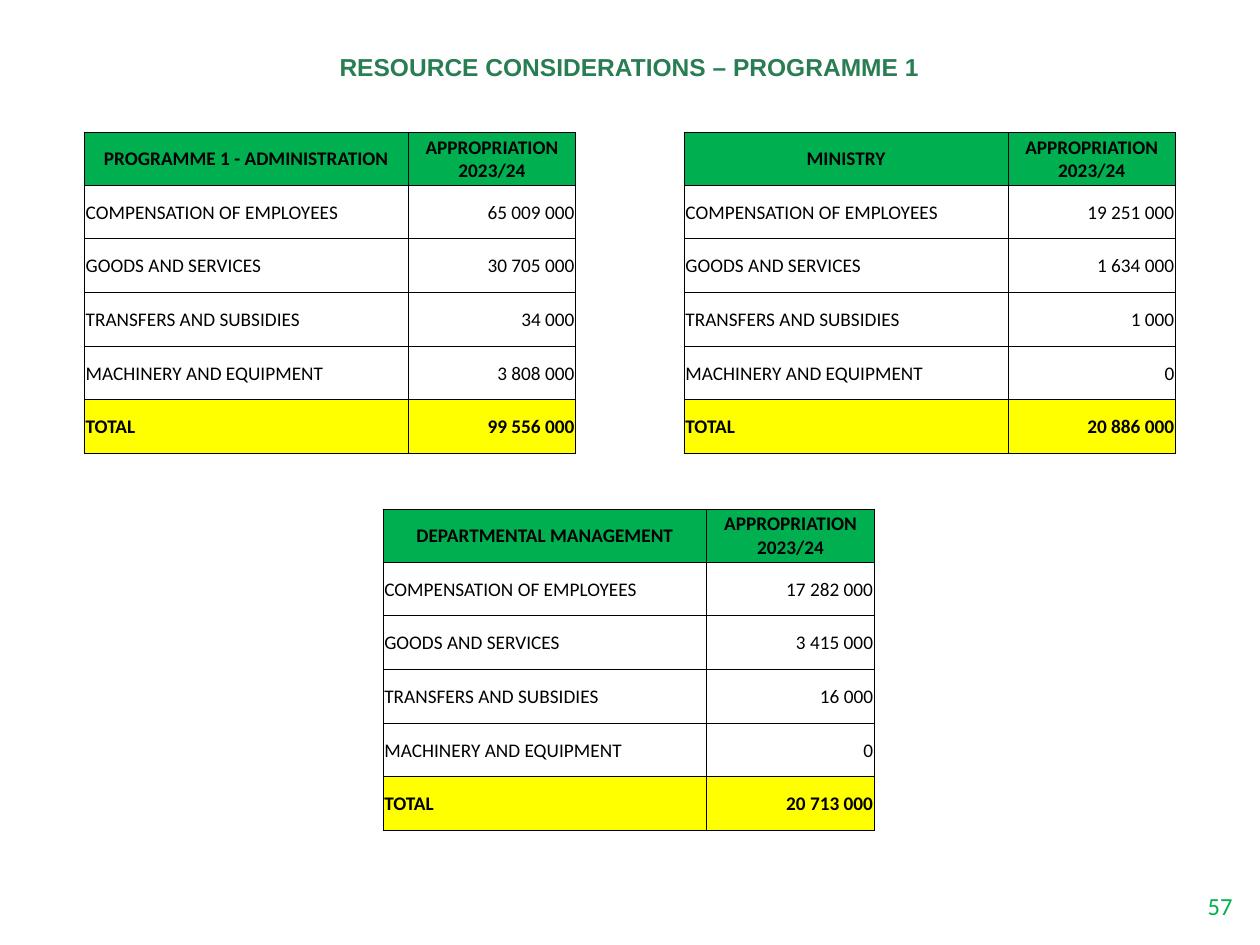
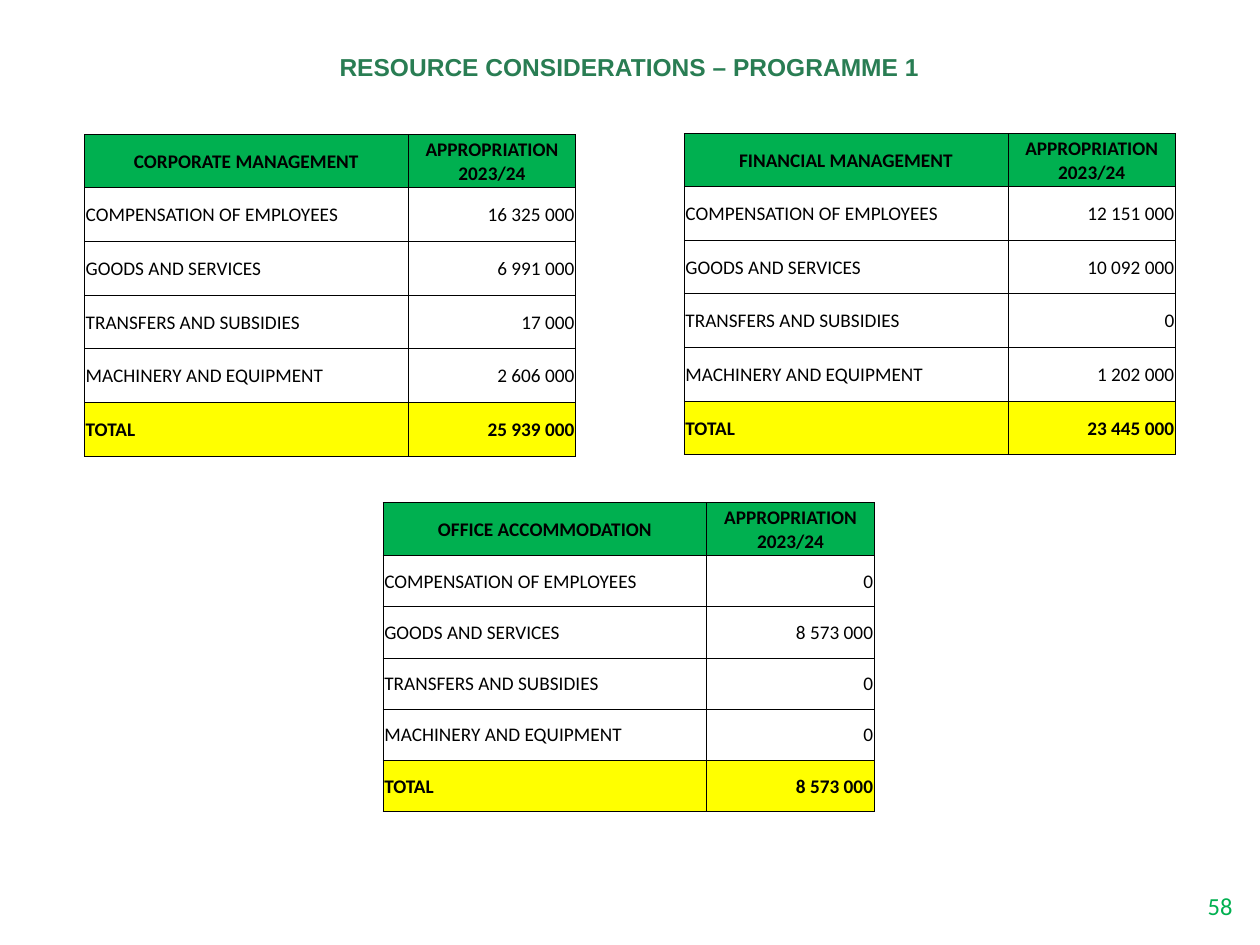
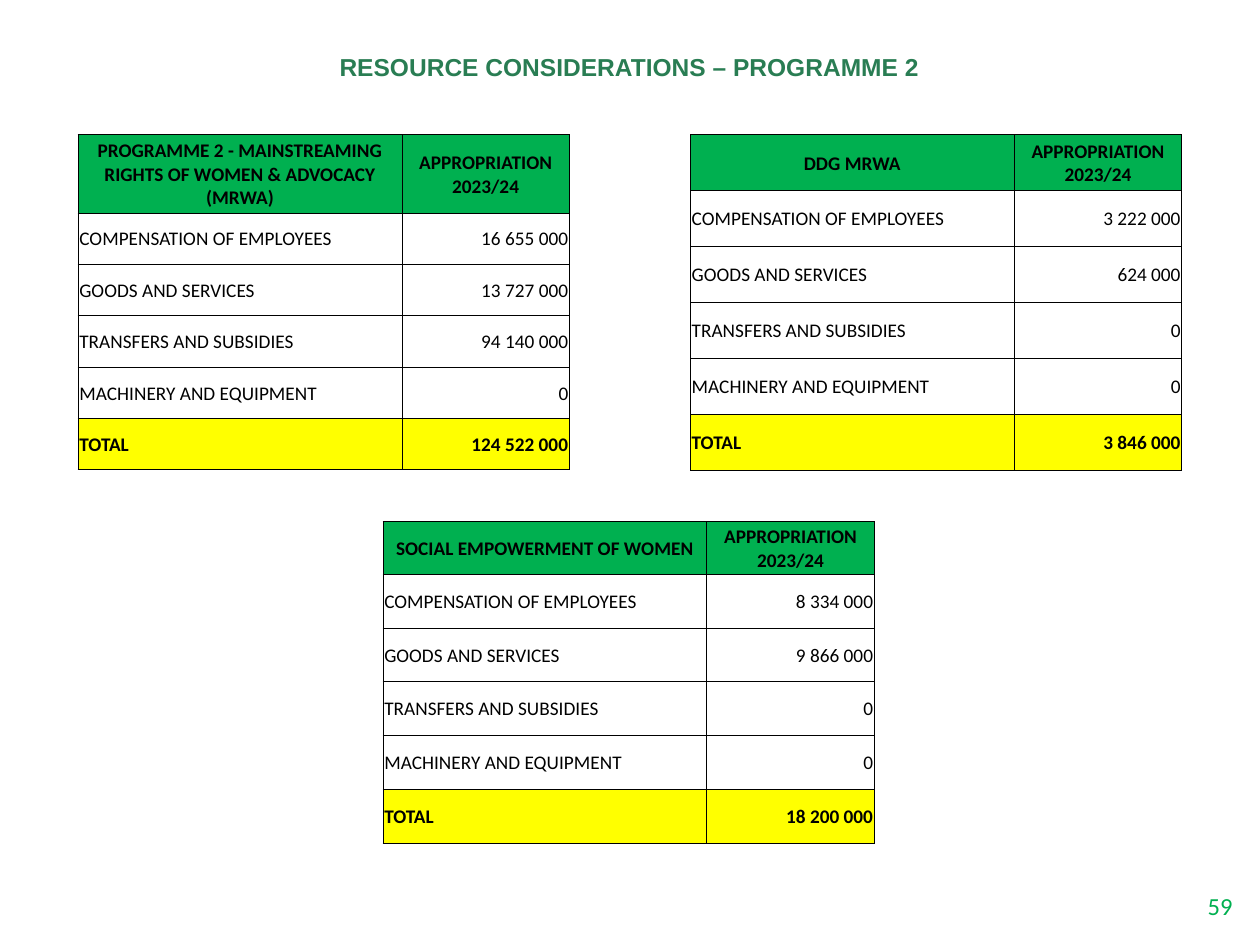
from dataclasses import dataclass

from lxml.etree import SubElement
from pptx import Presentation
from pptx.dml.color import RGBColor
from pptx.enum.text import MSO_ANCHOR as Anchor, PP_ALIGN as Align
from pptx.oxml.ns import qn
from pptx.util import Emu, Inches, Pt

# Slide grid: square units, 100 columns by 75 rows
COLUMNS, ROWS = 100, 75
UNIT = Inches(0.1)

# Shared style
TITLE_FONT, BODY_FONT = "Arial", "Calibri"
TITLE_GREEN, BRAND_GREEN = "297D53", "00B050"
YELLOW, BLACK = "FFFF00", "000000"
TITLE_LAYOUT = 5
FIRST_PAGE = 57

# Table geometry, in grid units
LABEL_WIDTH, AMOUNT_WIDTH = 25.7, 13.3
TABLE_WIDTH = LABEL_WIDTH + AMOUNT_WIDTH
CENTRE_LEFT = 30.4
HEADER_HEIGHT = 4.2
AMOUNT_HEADING = "APPROPRIATION 2023/24"
EXPENSES = [
    "COMPENSATION OF EMPLOYEES",
    "GOODS AND SERVICES",
    "TRANSFERS AND SUBSIDIES",
    "MACHINERY AND EQUIPMENT",
]


@dataclass
class Budget:
    heading: str
    top: float
    thousands: tuple[int, ...]
    height: float = 25.5
    header_height: float = HEADER_HEIGHT


@dataclass
class BudgetSlide:
    programme: int
    margin: float
    left: Budget
    right: Budget
    centre: Budget


SLIDES = [
    BudgetSlide(
        1, 6.7,
        Budget("PROGRAMME 1 - ADMINISTRATION", 10.5, (65009, 30705, 34, 3808)),
        Budget("MINISTRY", 10.5, (19251, 1634, 1, 0)),
        Budget("DEPARTMENTAL MANAGEMENT", 40.4, (17282, 3415, 16, 0)),
    ),
    BudgetSlide(
        1, 6.7,
        Budget("CORPORATE MANAGEMENT", 10.7, (16325, 6991, 17, 2606)),
        Budget("FINANCIAL MANAGEMENT", 10.6, (12151, 10092, 0, 1202)),
        Budget("OFFICE ACCOMMODATION", 39.9, (0, 8573, 0, 0), height=24.5),
    ),
    BudgetSlide(
        2, 6.2,
        Budget("PROGRAMME 2 - MAINSTREAMING RIGHTS OF WOMEN & ADVOCACY (MRWA)",
               10.7, (16655, 13727, 94140, 0), height=26.6, header_height=6.2),
        Budget("DDG MRWA", 10.7, (3222, 624, 0, 0), height=26.6, header_height=4.43),
        Budget("SOCIAL EMPOWERMENT OF WOMEN", 41.4, (8334, 9866, 0, 0)),
    ),
]


def grid(units: float) -> Emu:
    return Emu(round(units * UNIT))


def rgb(value: str) -> RGBColor:
    return RGBColor.from_string(value)


def rand(thousands: int) -> str:
    return f"{thousands * 1000:,}".replace(",", " ")


def write(text_frame, text: str, font_name: str, size: float, color: str,
          align: Align, bold: bool = False) -> None:
    text_frame.text = text
    paragraph = text_frame.paragraphs[0]
    paragraph.alignment = align
    font = paragraph.runs[0].font
    font.name, font.size, font.bold = font_name, Pt(size), bold
    font.color.rgb = rgb(color)


def add_borders(cell) -> None:
    properties = cell._tc.get_or_add_tcPr()
    for side in ("lnL", "lnR", "lnT", "lnB"):
        line = SubElement(properties, qn(f"a:{side}"), w=str(Pt(0.5)))
        fill = SubElement(line, qn("a:solidFill"))
        SubElement(fill, qn("a:srgbClr"), val=BLACK)


def format_cell(cell, text: str, align: Align, fill: str | None) -> None:
    cell.margin_left = cell.margin_top = cell.margin_right = Inches(0.01)
    cell.margin_bottom = 0
    cell.vertical_anchor = Anchor.MIDDLE
    write(cell.text_frame, text, BODY_FONT, 11, BLACK, align, bold=fill is not None)
    add_borders(cell)
    if fill:
        cell.fill.solid()
        cell.fill.fore_color.rgb = rgb(fill)
    else:
        cell.fill.background()


def add_budget(slide, budget: Budget, left: float) -> None:
    lines = [
        (budget.heading, AMOUNT_HEADING),
        *((label, rand(amount)) for label, amount in zip(EXPENSES, budget.thousands)),
        ("TOTAL", rand(sum(budget.thousands))),
    ]
    table = slide.shapes.add_table(
        len(lines), 2, grid(left), grid(budget.top),
        grid(TABLE_WIDTH), grid(budget.height)).table
    table.first_row = table.horz_banding = False
    for column, width in zip(table.columns, (LABEL_WIDTH, AMOUNT_WIDTH)):
        column.width = grid(width)

    last = len(lines) - 1
    fills = {0: BRAND_GREEN, last: YELLOW}
    body_height = (budget.height - budget.header_height) / last
    for index, texts in enumerate(lines):
        is_header = index == 0
        table.rows[index].height = grid(budget.header_height if is_header else body_height)
        aligns = (Align.CENTER, Align.CENTER) if is_header else (Align.LEFT, Align.RIGHT)
        for column, (text, align) in enumerate(zip(texts, aligns)):
            format_cell(table.cell(index, column), text, align, fills.get(index))


def add_title(slide, text: str) -> None:
    title = slide.shapes.title
    title.left, title.top = grid(2.2), grid(3.9)
    title.width, title.height = grid(95.5), grid(6.8)
    title.text_frame.vertical_anchor = Anchor.TOP
    write(title.text_frame, text, TITLE_FONT, 14, TITLE_GREEN, Align.CENTER, bold=True)
    title.text_frame.paragraphs[0].line_spacing = 0.9


def add_page_number(slide, number: int) -> None:
    box = slide.shapes.add_textbox(grid(92.4), grid(70.2), grid(6.4), grid(3.4))
    box.text_frame.word_wrap = True
    write(box.text_frame, str(number), BODY_FONT, 14, BRAND_GREEN, Align.RIGHT)


def main() -> None:
    presentation = Presentation()
    presentation.slide_width, presentation.slide_height = grid(COLUMNS), grid(ROWS)
    for page, content in enumerate(SLIDES, FIRST_PAGE):
        slide = presentation.slides.add_slide(presentation.slide_layouts[TITLE_LAYOUT])
        add_page_number(slide, page)
        add_title(slide, f"RESOURCE CONSIDERATIONS – PROGRAMME {content.programme}")
        # Two mirrored tables above, one in the middle below
        add_budget(slide, content.left, content.margin)
        add_budget(slide, content.right, COLUMNS - content.margin - TABLE_WIDTH)
        add_budget(slide, content.centre, CENTRE_LEFT)
    presentation.save("out.pptx")


if __name__ == "__main__":
    main()
